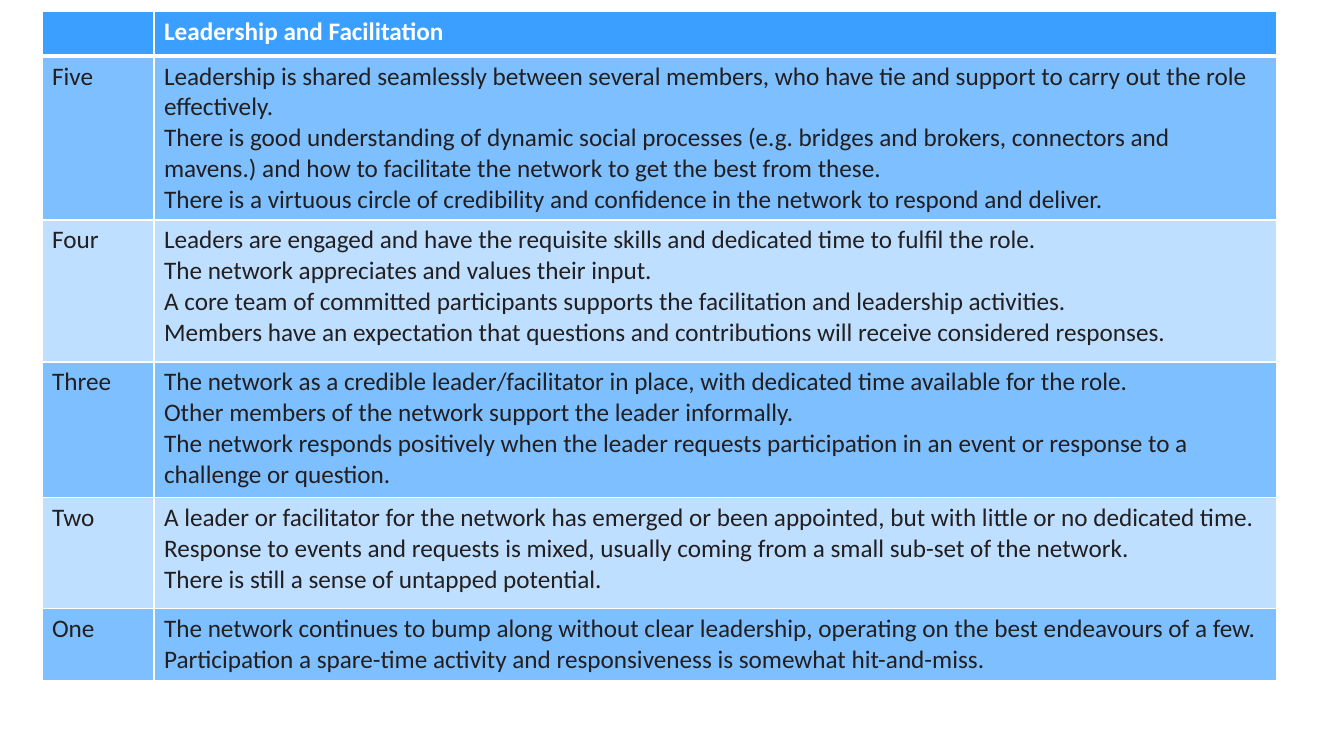
"""Build a one-slide table that grades network leadership from five to one."""
from dataclasses import dataclass

from lxml.etree import SubElement
from pptx import Presentation
from pptx.dml.color import RGBColor
from pptx.oxml.ns import qn
from pptx.util import Emu, Pt

HEAD = ("", "Leadership and Facilitation")
LEVELS = [
    ("Five", [
        "Leadership is shared seamlessly between several members, who have tie and support to carry out the role effectively.",
        "There is good understanding of dynamic social processes (e.g. bridges and brokers, connectors and mavens.) and how to facilitate the network to get the best from these.",
        "There is a virtuous circle of credibility and confidence in the network to respond and deliver.",
    ]),
    ("Four", [
        "Leaders are engaged and have the requisite skills and dedicated time to fulfil the role.",
        "The network appreciates and values their input.",
        "A core team of committed participants supports the facilitation and leadership activities.",
        "Members have an expectation that questions and contributions will receive considered responses.",
    ]),
    ("Three", [
        "The network as a credible leader/facilitator in place, with dedicated time available for the role.",
        "Other members of the network support the leader informally.",
        "The network responds positively when the leader requests participation in an event or response to a challenge or question.",
    ]),
    ("Two", [
        "A leader or facilitator for the network has emerged or been appointed, but with little or no dedicated time.",
        "Response to events and requests is mixed, usually coming from a small sub-set of the network.",
        "There is still a sense of untapped potential.",
    ]),
    ("One", [
        "The network continues to bump along without clear leadership, operating on the best endeavours of a few.",
        "Participation a spare-time activity and responsiveness is somewhat hit-and-miss.",
    ]),
]
PAGE = (1344, 756)
LEFT, TOP = 42, 11
COLS = [112, 1123]
ROWS = [45, 164, 142, 136, 111, 72]


@dataclass(frozen=True)
class Theme:
    """Colours, font and point sizes."""
    head: str = "3B9FFF"
    bands: tuple = ("7DBFFF", "BEDFFF")
    ink: str = "231F20"
    white: str = "FFFFFF"
    font: str = "Calibri"
    size: int = 18
    thin: int = 1
    thick: int = 3


THEME = Theme()


def px(count):
    """Turn pixels into EMU."""
    return Emu(round(count * 914400 / 100.8))


def write(frame, text, color=THEME.ink, bold=False):
    """Fill a text frame, one paragraph per line of text."""
    frame.text = text
    for para in frame.paragraphs:
        font = para.font
        for run in para.runs:
            font = run.font
        font.name, font.size, font.bold = THEME.font, Pt(THEME.size), bold
        font.color.rgb = RGBColor.from_string(color)


def edge(cell, **widths):
    """Draw white cell borders, with widths in points by side."""
    props = cell._tc.get_or_add_tcPr()
    for side, width in widths.items():
        line = SubElement(props, qn(f"a:ln{side}"), w=str(Pt(width)))
        fill = SubElement(line, qn("a:solidFill"))
        SubElement(fill, qn("a:srgbClr"), val=THEME.white)


def main():
    """Lay out the table and save the deck."""
    deck = Presentation()
    deck.slide_width, deck.slide_height = map(px, PAGE)
    slide = deck.slides.add_slide(deck.slide_layouts[6])
    table = slide.shapes.add_table(
        len(ROWS), len(COLS), px(LEFT), px(TOP), px(sum(COLS)), px(sum(ROWS))
    ).table
    for col, width in zip(table.columns, COLS):
        col.width = px(width)
    for row, height in zip(table.rows, ROWS):
        row.height = px(height)

    body = [(name, "\n".join(lines)) for name, lines in LEVELS]
    for r, texts in enumerate([HEAD] + body):
        top = r == 0
        fill = THEME.head if top else THEME.bands[(r - 1) % 2]
        ink = THEME.white if top else THEME.ink
        for c, text in enumerate(texts):
            cell = table.cell(r, c)
            write(cell.text_frame, text, color=ink, bold=top)
            edge(cell, L=THEME.thin, R=THEME.thin,
                 T=THEME.thick if r == 1 else THEME.thin,
                 B=THEME.thick if top else THEME.thin)
            cell.fill.solid()
            cell.fill.fore_color.rgb = RGBColor.from_string(fill)
    deck.save("out.pptx")


if __name__ == "__main__":
    main()
